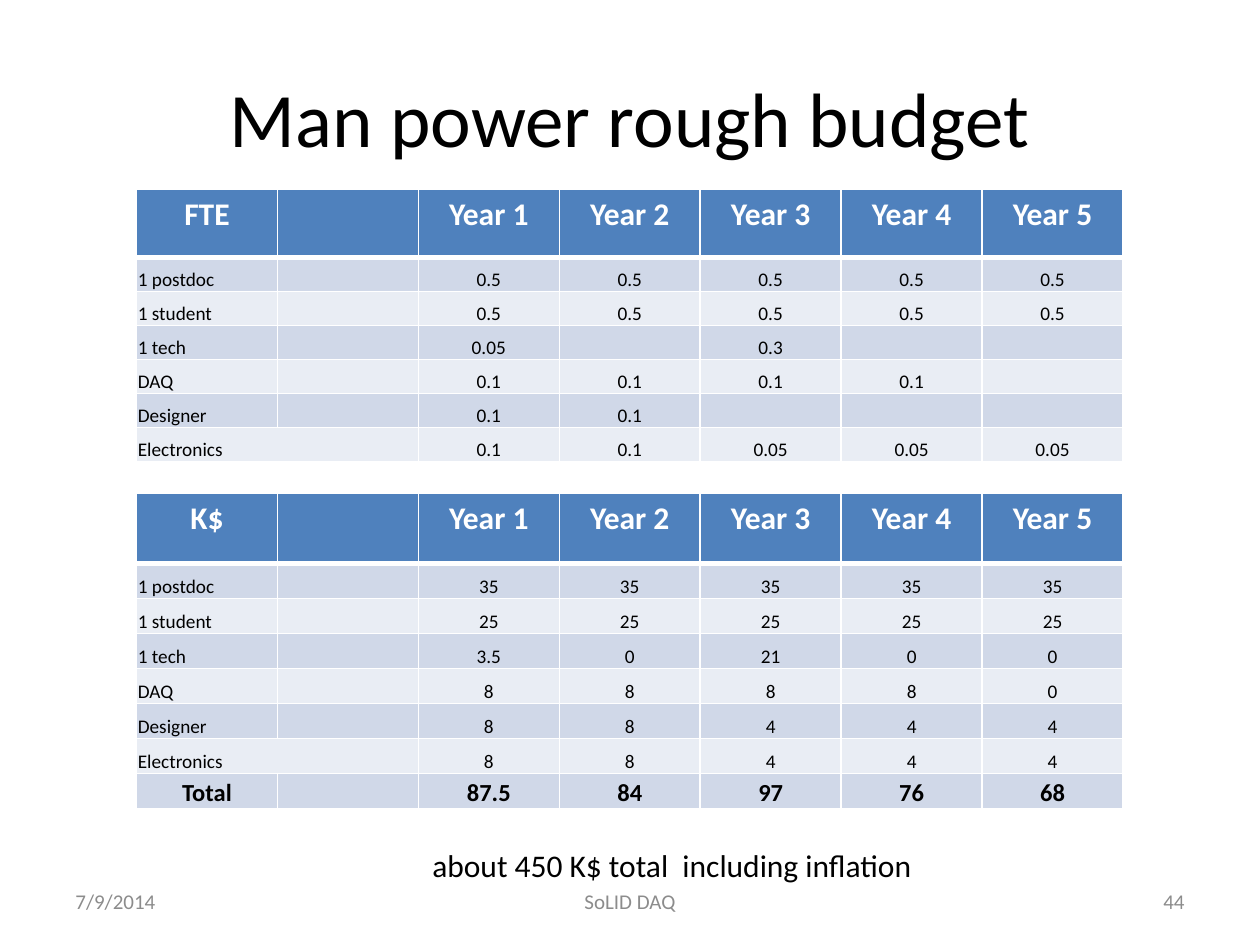
from dataclasses import dataclass

from lxml import etree
from pptx import Presentation
from pptx import util as u
from pptx.dml import color
from pptx.enum import text as t
from pptx.oxml import ns

BLACK = color.RGBColor(0x00, 0x00, 0x00)
WHITE = color.RGBColor(0xFF, 0xFF, 0xFF)
GREY = color.RGBColor(0x8C, 0x8C, 0x8C)
HEADER_BLUE = color.RGBColor(0x4F, 0x81, 0xBD)
BAND_DARK = color.RGBColor(0xD0, 0xD8, 0xE8)
BAND_LIGHT = color.RGBColor(0xE9, 0xED, 0xF4)

FONT = "Calibri"
LEFT, TOP, MIDDLE, BOTTOM = "lnL", "lnT", t.MSO_ANCHOR.MIDDLE, "lnB"
CENTER, START, END = t.PP_ALIGN.CENTER, t.PP_ALIGN.LEFT, t.PP_ALIGN.RIGHT
TABLE_LEFT, COLUMN_WIDTH = 78, 80.55
YEARS = [f"Year {number}" for number in range(1, 6)]
BODY_FORMAT = {
    "vertical_anchor": t.MSO_ANCHOR.BOTTOM,
    "margin_left": u.Pt(0.75),
    "margin_right": u.Pt(0.75),
    "margin_top": u.Pt(0.75),
    "margin_bottom": u.Pt(0),
}


@dataclass
class Caption:
    wording: str
    left: float
    top: float
    width: float
    height: float
    size: float
    ink: color.RGBColor
    align: t.PP_ALIGN = CENTER
    anchor: t.MSO_ANCHOR = MIDDLE


@dataclass
class Budget:
    unit: str
    top: float
    row_height: float
    lines: list[tuple[str, ...]]


CAPTIONS = [
    Caption("Man power rough budget", 36, 21.6, 648, 90, 44, BLACK),
    Caption("about 450 K$ total  including inflation", 156, 480, 456, 29, 18, BLACK,
            anchor=t.MSO_ANCHOR.TOP),
    Caption("7/9/2014", 36, 500.5, 168, 28.8, 12, GREY, START),
    Caption("SoLID DAQ", 246, 500.5, 228, 28.8, 12, GREY),
    Caption("44", 516, 500.5, 168, 28.8, 12, GREY, END),
]

BUDGETS = [
    Budget("K$", 282, 20, [
        ("1 postdoc", "35", "35", "35", "35", "35"),
        ("1 student", "25", "25", "25", "25", "25"),
        ("1 tech", "3.5", "0", "21", "0", "0"),
        ("DAQ", "8", "8", "8", "8", "0"),
        ("Designer", "8", "8", "4", "4", "4"),
        ("Electronics", "8", "8", "4", "4", "4"),
        ("Total", "87.5", "84", "97", "76", "68"),
    ]),
    Budget("FTE", 108, 19.5, [
        ("1 postdoc", "0.5", "0.5", "0.5", "0.5", "0.5"),
        ("1 student", "0.5", "0.5", "0.5", "0.5", "0.5"),
        ("1 tech", "0.05", "", "0.3", "", ""),
        ("DAQ", "0.1", "0.1", "0.1", "0.1", ""),
        ("Designer", "0.1", "0.1", "", "", ""),
        ("Electronics", "0.1", "0.1", "0.05", "0.05", "0.05"),
    ]),
]


def apply_format(target, values: dict) -> None:
    for name, value in values.items():
        setattr(target, name, value)


def write(paragraph, wording: str, size: float, ink: color.RGBColor,
          align: t.PP_ALIGN, bold: bool = False) -> None:
    paragraph.alignment = align
    if not wording:
        etree.SubElement(paragraph._p, ns.qn("a:endParaRPr"), sz=str(size * 100))
        return
    run = paragraph.add_run()
    apply_format(run, {"text": wording})
    apply_format(run.font, {"name": FONT, "size": u.Pt(size), "bold": bold})
    run.font.color.rgb = ink


def draw_caption(slide, caption: Caption) -> None:
    box = slide.shapes.add_textbox(u.Pt(caption.left), u.Pt(caption.top),
                                   u.Pt(caption.width), u.Pt(caption.height))
    apply_format(box.text_frame, {"word_wrap": True, "vertical_anchor": caption.anchor})
    write(box.text_frame.paragraphs[0], caption.wording, caption.size,
          caption.ink, caption.align)


def draw_borders(cell, row: int) -> None:
    widths = {LEFT: 1, "lnR": 1, TOP: 3 if row == 1 else 1, BOTTOM: 3 if row == 0 else 1}
    for edge, width in widths.items():
        line = etree.SubElement(cell._tc.get_or_add_tcPr(), ns.qn(f"a:{edge}"),
                                w=str(u.Pt(width)))
        fill = etree.SubElement(line, ns.qn("a:solidFill"))
        etree.SubElement(fill, ns.qn("a:srgbClr"), val=str(WHITE))


def draw_cell(cell, row: int, column: int, label: str, wording: str) -> None:
    draw_borders(cell, row)
    cell.fill.solid()
    paragraph = cell.text_frame.paragraphs[0]
    if row == 0:
        cell.fill.fore_color.rgb = HEADER_BLUE
        write(paragraph, wording, 18, WHITE, CENTER, True)
        return
    cell.fill.fore_color.rgb = BAND_DARK if row % 2 else BAND_LIGHT
    apply_format(cell, BODY_FORMAT)
    total = label == "Total"
    align = START if column == 0 and not total else CENTER
    write(paragraph, wording, 14 if total else 11, BLACK, align, total)


def draw_budget(slide, budget: Budget) -> None:
    lines = [(budget.unit, *YEARS), *budget.lines]
    columns = len(YEARS) + 2
    table = slide.shapes.add_table(
        len(lines), columns, u.Pt(TABLE_LEFT), u.Pt(budget.top),
        u.Pt(COLUMN_WIDTH * columns), u.Pt(budget.row_height * (len(lines) + 1))).table
    for column in table.columns:
        column.width = u.Pt(COLUMN_WIDTH)
    for row, (label, *amounts) in enumerate(lines):
        table.rows[row].height = u.Pt(budget.row_height * (1 if row else 2))
        for column, wording in enumerate((label, "", *amounts)):
            draw_cell(table.cell(row, column), row, column, label, wording)
        if label == "Electronics":
            table.cell(row, 0).merge(table.cell(row, 1))


def main() -> None:
    deck = Presentation()
    apply_format(deck, {"slide_width": u.Pt(720), "slide_height": u.Pt(540)})
    slide = deck.slides.add_slide(deck.slide_layouts[6])
    for budget in BUDGETS:
        draw_budget(slide, budget)
    for caption in CAPTIONS:
        draw_caption(slide, caption)
    deck.save("out.pptx")


if __name__ == "__main__":
    main()
